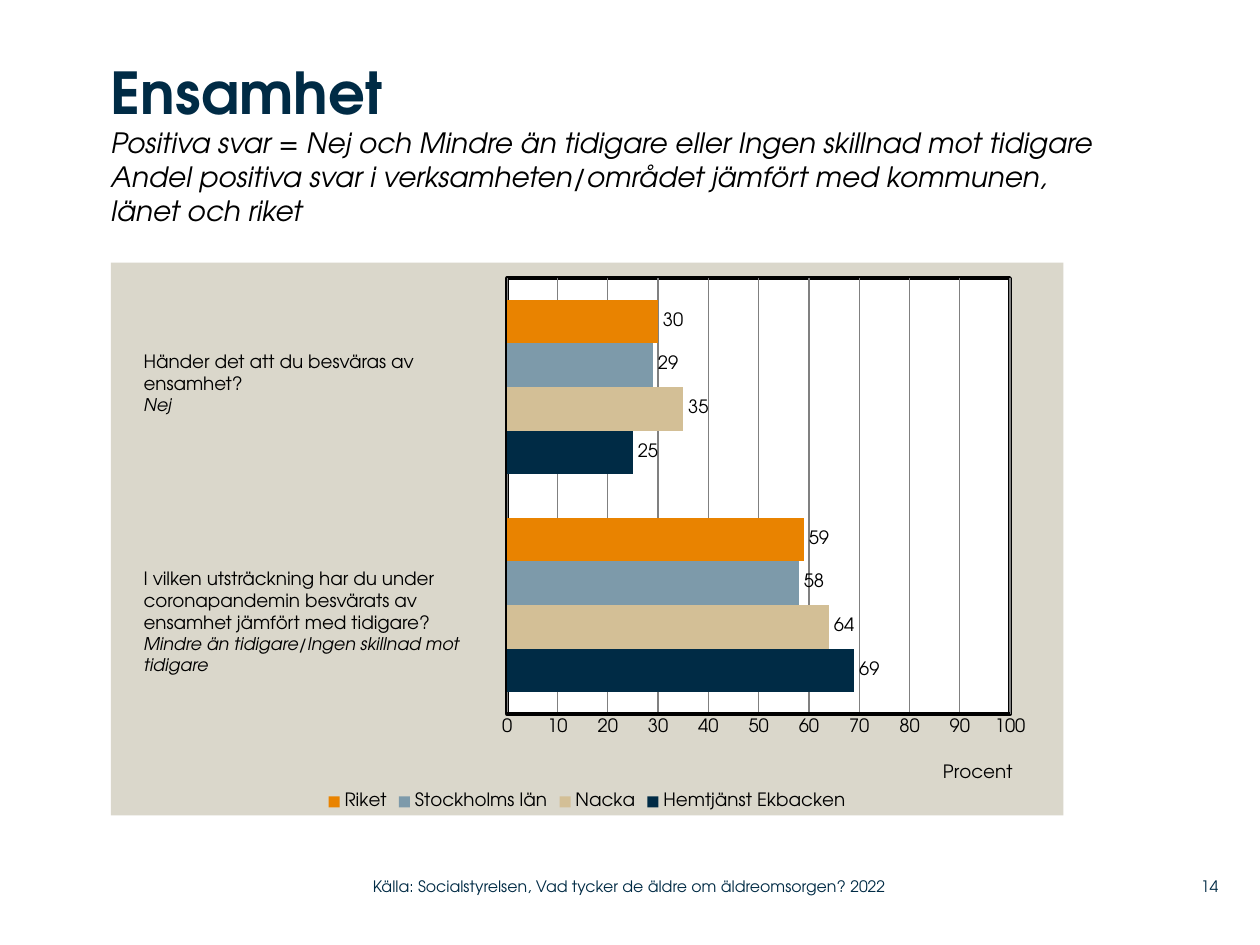
"""Build the slide on loneliness among older people in care."""
from lxml.etree import SubElement
from pptx import Presentation
from pptx.chart.data import CategoryChartData
from pptx.dml.color import RGBColor
from pptx.enum.chart import XL_CHART_TYPE, XL_LABEL_POSITION, XL_LEGEND_POSITION, XL_TICK_MARK
from pptx.enum.text import MSO_ANCHOR, MSO_AUTO_SIZE, PP_ALIGN
from pptx.oxml import parse_xml
from pptx.oxml.ns import nsdecls, qn
from pptx.util import Pt

FONT = "TeX Gyre Adventor"
NAVY, BLACK, GREY, PANEL, WHITE = "002B45", "000000", "808080", "DAD7CB", "FFFFFF"


def rgb(value):
    return RGBColor.from_string(value)


def area_format(fill, line=None):
    outline = "<a:ln><a:noFill/></a:ln>"
    if line:
        outline = f'<a:ln w="{Pt(2)}"><a:solidFill><a:srgbClr val="{line}"/></a:solidFill></a:ln>'
    return parse_xml(
        f'<c:spPr {nsdecls("c", "a")}><a:solidFill><a:srgbClr val="{fill}"/></a:solidFill>'
        f"{outline}</c:spPr>"
    )


def manual_layout(**settings):
    layout = parse_xml(f'<c:layout {nsdecls("c")}><c:manualLayout/></c:layout>')
    for tag, value in settings.items():
        SubElement(layout[0], qn(f"c:{tag}")).set("val", str(value))
    return layout


class SlideBuilder:
    def __init__(self, presentation):
        self.slide = presentation.slides.add_slide(presentation.slide_layouts[5])

    def style(self, font, size, color=BLACK, bold=False, italic=False):
        font.name, font.size, font.bold, font.italic = FONT, Pt(size), bold, italic
        font.color.rgb = rgb(color)

    def frame(self, shape, inset, anchor):
        frame = shape.text_frame
        frame.word_wrap, frame.vertical_anchor = True, anchor
        if not inset:
            frame.margin_left = frame.margin_right = frame.margin_top = frame.margin_bottom = 0
        return frame

    def title(self, box, heading, explanations):
        title = self.slide.shapes.title
        title.left, title.top, title.width, title.height = map(Pt, box)
        frame = self.frame(title, False, MSO_ANCHOR.TOP)
        frame.auto_size = MSO_AUTO_SIZE.NONE
        paragraph = frame.paragraphs[0]
        paragraph.alignment = PP_ALIGN.LEFT
        run = paragraph.add_run()
        run.text = heading
        self.style(run.font, 33, NAVY, bold=True)
        for explanation in explanations:
            paragraph.add_line_break()
            run = paragraph.add_run()
            run.text = explanation
            self.style(run.font, 16, italic=True)

    def question(self, box, lines, answer):
        frame = self.frame(self.slide.shapes.add_textbox(*map(Pt, box)), True, MSO_ANCHOR.TOP)
        frame.auto_size = MSO_AUTO_SIZE.SHAPE_TO_FIT_TEXT
        frame.text = "\n".join([*lines, answer])
        for paragraph in frame.paragraphs[:-1]:
            self.style(paragraph.font, 10.5)
        self.style(frame.paragraphs[-1].font, 10, italic=True)

    def footer(self, box, text, alignment=PP_ALIGN.LEFT):
        frame = self.frame(self.slide.shapes.add_textbox(*map(Pt, box)), False, MSO_ANCHOR.MIDDLE)
        frame.text = text
        frame.paragraphs[0].alignment = alignment
        self.style(frame.paragraphs[0].font, 9, NAVY)

    def bar_chart(self, box, categories, groups, unit):
        data = CategoryChartData()
        data.categories = categories
        for name, values, _ in groups:
            data.add_series(name, values)
        chart = self.slide.shapes.add_chart(
            XL_CHART_TYPE.BAR_CLUSTERED, *map(Pt, box), data
        ).chart
        self.style(chart.font, 10.5)
        chart.has_title = False
        chart.has_legend = True
        chart.legend.position = XL_LEGEND_POSITION.BOTTOM
        chart.legend.include_in_layout = False
        self.style(chart.legend.font, 10.5)

        plot = chart.plots[0]
        plot.gap_width, plot.overlap, plot.vary_by_categories = 100, 0, False
        for series, (_, _, color) in zip(plot.series, groups):
            series.format.fill.solid()
            series.format.fill.fore_color.rgb = rgb(color)
            labels = series.data_labels
            labels.show_value = True
            labels.position = XL_LABEL_POSITION.OUTSIDE_END
            self.style(labels.font, 10.5)

        chart.category_axis.visible = False
        axis = chart.value_axis
        axis.minimum_scale, axis.maximum_scale, axis.major_unit = 0, 100, 10
        axis.major_tick_mark = axis.minor_tick_mark = XL_TICK_MARK.NONE
        axis.format.line.color.rgb, axis.format.line.width = rgb(BLACK), Pt(2)
        gridline = axis.major_gridlines.format.line
        gridline.color.rgb, gridline.width = rgb(GREY), Pt(0.75)
        self.style(axis.tick_labels.font, 10.5)
        axis_title = axis.axis_title.text_frame
        axis_title.text = unit
        self.style(axis_title.paragraphs[0].font, 10.5)
        self.arrange(chart)

    def arrange(self, chart):
        space = chart.element
        plot_area = space.chart.plotArea
        for layout in plot_area.findall(qn("c:layout")):
            plot_area.remove(layout)
        plot_area.insert(0, manual_layout(
            layoutTarget="inner", xMode="edge", yMode="edge", x=0.416, y=0.028, w=0.528, h=0.789
        ))
        plot_area.append(area_format(WHITE, BLACK))
        space.chart.addnext(area_format(PANEL))
        unit_title = plot_area.find(qn("c:valAx")).find(qn("c:title"))
        for layout in unit_title.findall(qn("c:layout")):
            unit_title.remove(layout)
        unit_title.find(qn("c:tx")).addnext(
            manual_layout(xMode="edge", yMode="edge", x=0.87, y=0.9)
        )


def main():
    presentation = Presentation()
    presentation.slide_width, presentation.slide_height = Pt(720), Pt(540)
    builder = SlideBuilder(presentation)
    builder.title((63.4, 32.4, 562.3, 118), "Ensamhet", [
        "Positiva svar = Nej och Mindre än tidigare eller Ingen skillnad mot tidigare",
        "Andel positiva svar i verksamheten/området jämfört med kommunen, länet och riket",
    ])
    builder.bar_chart((63.4, 150, 544.3, 316), ["1", "2"], [
        ("Hemtjänst Ekbacken", (69, 25), NAVY),
        ("Nacka", (64, 35), "D3BF96"),
        ("Stockholms län", (58, 29), "7D9AAA"),
        ("Riket", (59, 30), "E98300"),
    ], "Procent")
    builder.question((75, 320.4, 211.7, 69.8), [
        "I vilken utsträckning har du under coronapandemin besvärats av ensamhet "
        "jämfört med tidigare?",
    ], "Mindre än tidigare/Ingen skillnad mot tidigare")
    builder.question(
        (75, 196.6, 211.7, 45.4), ["Händer det att du besväras av", "ensamhet?"], "Nej"
    )
    builder.footer(
        (213.1, 496, 319, 21), "Källa: Socialstyrelsen, Vad tycker de äldre om äldreomsorgen? 2022"
    )
    builder.footer((662.4, 496, 33.8, 21), "14", PP_ALIGN.RIGHT)
    presentation.save("out.pptx")


if __name__ == "__main__":
    main()
